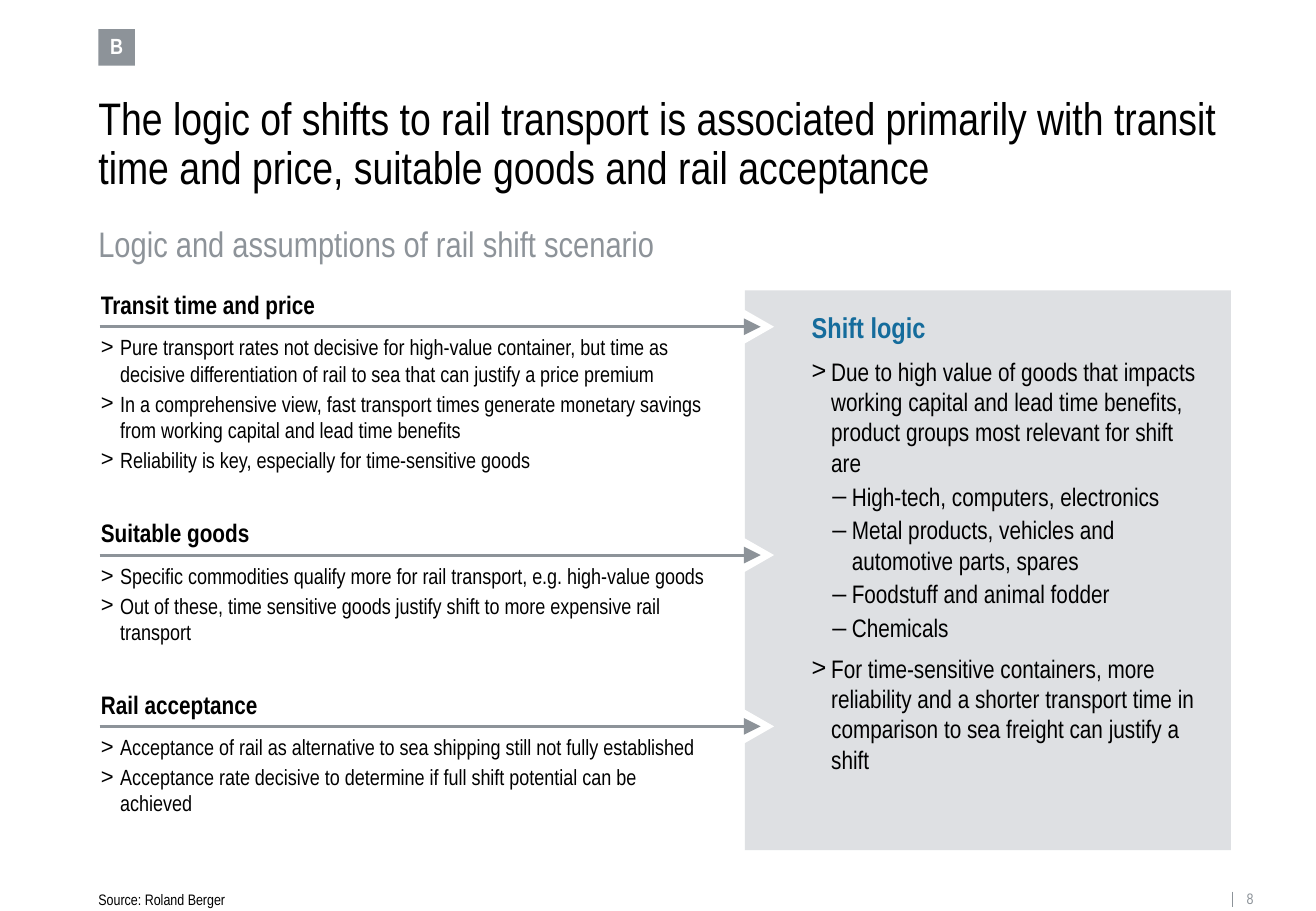
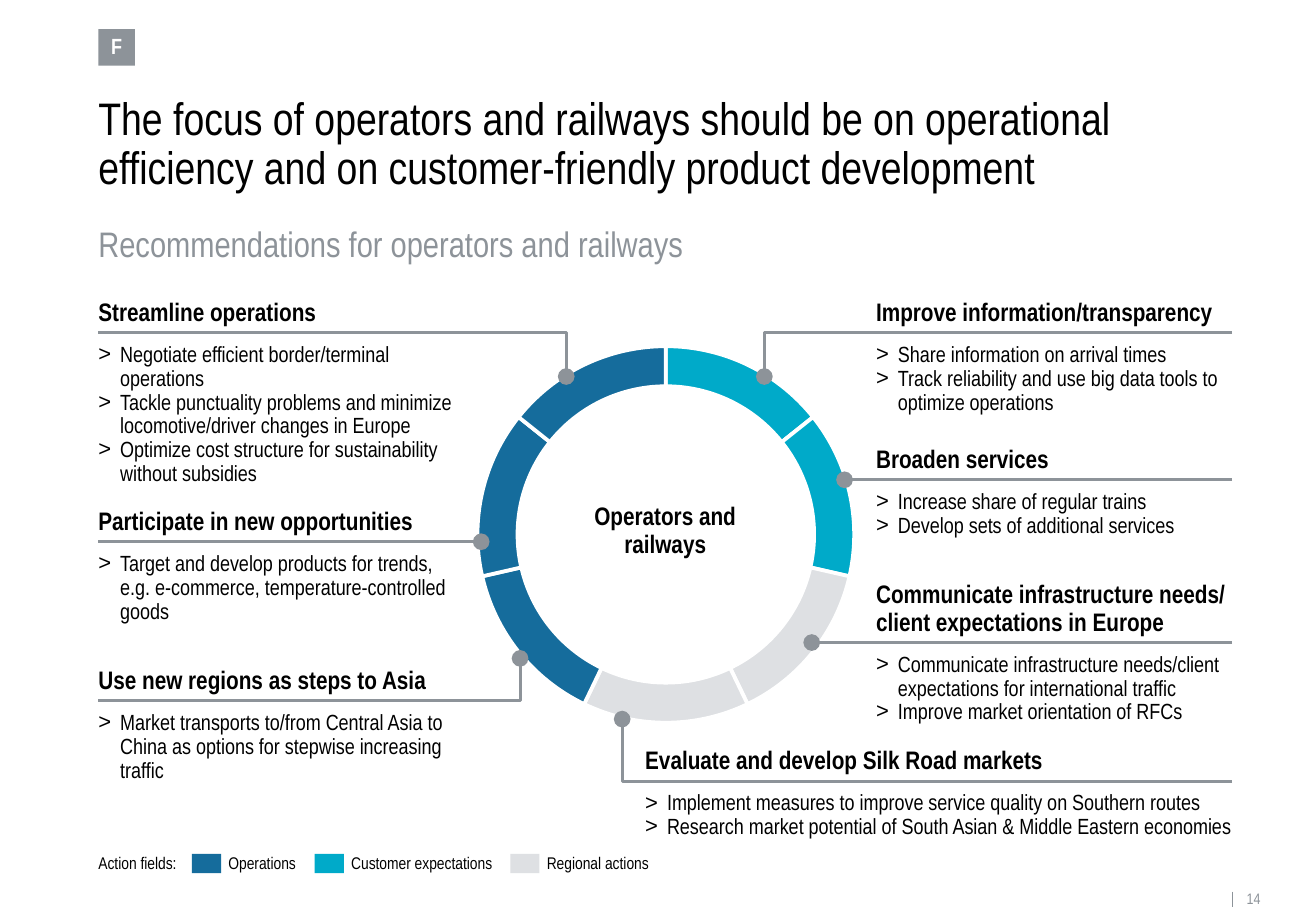
from dataclasses import dataclass
from math import cos, radians, sin, tan

from lxml.etree import SubElement
from pptx import Presentation
from pptx.dml.color import RGBColor
from pptx.enum.shapes import MSO_CONNECTOR as Conn, MSO_SHAPE as Shp
from pptx.enum.text import MSO_ANCHOR as Anchor, MSO_AUTO_SIZE as Fit, PP_ALIGN as Align
from pptx.oxml.ns import qn
from pptx.util import Inches, Pt

FONT = "Arial Narrow"
BULLET_FONT = "Arial"
BLACK = RGBColor(0x00, 0x00, 0x00)
WHITE = RGBColor(0xFF, 0xFF, 0xFF)
GREY = RGBColor(0x8D, 0x93, 0x99)
LIGHT = RGBColor(0xDE, 0xE0, 0xE3)
BLUE = RGBColor(0x15, 0x6C, 0x9C)
CYAN = RGBColor(0x00, 0xAA, 0xC9)

LEFT, RIGHT = 0.81, 10.14
TIGHT = 0.9
Point = tuple[float, float]


@dataclass(frozen=True)
class Style:
    size: float
    color: RGBColor = BLACK
    bold: bool = False
    spacing: float | None = None
    align: Align = Align.LEFT
    anchor: Anchor = Anchor.TOP
    wrap: bool = True
    grow: bool = True


@dataclass(frozen=True)
class Bullet:
    text: str
    level: int = 1
    indent: float = 0.16
    before: float = 2


@dataclass(frozen=True)
class Section:
    y: float
    title: str
    bullets: tuple[str, ...]
    height: float = 0.68


@dataclass(frozen=True)
class Callout:
    x: float
    title: str
    bullets: tuple[str, ...]
    route: tuple[Point, ...]
    rows: int = 1
    head_width: float = 2.94
    body_width: float = 2.94
    body_height: float = 0.71


TITLE = Style(27, spacing=TIGHT, grow=False)
SUBTITLE = Style(21, GREY, spacing=TIGHT)
BADGE = Style(13, WHITE, True, TIGHT, Align.CENTER, Anchor.MIDDLE, wrap=False, grow=False)
PAGE = Style(9, GREY, spacing=TIGHT, wrap=False)
SOURCE = Style(9, spacing=TIGHT, anchor=Anchor.BOTTOM, wrap=False)
HEADING = Style(15, bold=True)
CALLOUT_HEAD = Style(15, bold=True, spacing=TIGHT, anchor=Anchor.BOTTOM)
HUB = Style(15, bold=True, spacing=TIGHT, align=Align.CENTER, anchor=Anchor.MIDDLE, grow=False)
BODY = Style(13)
CALLOUT_BODY = Style(13, spacing=TIGHT)
LEGEND = Style(10, spacing=TIGHT, wrap=False)


# Text
def write(shape, items: list[str | Bullet], st: Style, top: float = 0, bottom: float = 0) -> None:
    tf = shape.text_frame
    tf.word_wrap = st.wrap
    tf.auto_size = Fit.SHAPE_TO_FIT_TEXT if st.grow else Fit.NONE
    tf.vertical_anchor = st.anchor
    tf.margin_left = tf.margin_right = 0
    tf.margin_top, tf.margin_bottom = Inches(top), Inches(bottom)
    for i, item in enumerate(items):
        p = tf.add_paragraph() if i else tf.paragraphs[0]
        p.alignment = st.align
        if isinstance(item, Bullet):
            p.level = item.level
            pPr = p._p.get_or_add_pPr()
            pPr.set("marL", str(Inches(item.indent)))
            pPr.set("indent", str(Inches(-0.16 if item.level == 2 else -item.indent)))
            SubElement(pPr, qn("a:buFont")).set("typeface", BULLET_FONT)
            SubElement(pPr, qn("a:buChar")).set("char", "–" if item.level == 2 else ">")
            if i:
                p.space_before = Pt(item.before)
        if st.spacing:
            p.line_spacing = st.spacing
        r = p.add_run()
        r.text = item.text if isinstance(item, Bullet) else item
        r.font.name, r.font.size, r.font.bold = FONT, Pt(st.size), st.bold
        r.font.color.rgb = st.color


def text(s, x: float, y: float, w: float, h: float, items: list[str | Bullet], st: Style,
         top: float = 0, bottom: float = 0) -> None:
    box = s.shapes.add_textbox(Inches(x), Inches(y), Inches(w), Inches(h))
    write(box, items, st, top, bottom)


# Shapes and lines
def block(s, x: float, y: float, w: float, h: float, color: RGBColor, kind: Shp = Shp.RECTANGLE):
    sp = s.shapes.add_shape(kind, Inches(x), Inches(y), Inches(w), Inches(h))
    sp.shadow.inherit = False
    sp.fill.solid()
    sp.fill.fore_color.rgb = color
    sp.line.fill.background()
    return sp


def freeform(s, points: list[Point], closed: bool):
    emu = [(Inches(x), Inches(y)) for x, y in points]
    fb = s.shapes.build_freeform(*emu[0])
    fb.add_line_segments(emu[1:], close=closed)
    sp = fb.convert_to_shape()
    sp.shadow.inherit = False
    return sp


def route_line(s, points: tuple[Point, ...], tail: str | None = None, width: float = 1.75) -> None:
    if len(points) == 2:
        sp = s.shapes.add_connector(Conn.STRAIGHT, *(Inches(v) for pt in points for v in pt))
    else:
        sp = freeform(s, list(points), closed=False)
        sp.fill.background()
    sp.line.color.rgb = GREY
    sp.line.width = Pt(width)
    spPr = sp._element.spPr
    if tail:
        end = SubElement(spPr.find(qn("a:ln")), qn("a:tailEnd"))
        for key, value in (("type", tail), ("w", "lg"), ("len", "lg")):
            end.set(key, value)
    if len(points) == 2:
        SubElement(spPr, qn("a:effectLst"))


# Frame shared by the slides
def new_slide(prs, letter: str, title: str, subtitle: str, number: int):
    s = prs.slides.add_slide(prs.slide_layouts[6])
    text(s, 10.26, 7.34, 0.13, 0.14, [str(number)], PAGE)
    route_line(s, ((RIGHT, 7.34), (RIGHT, 7.47)), width=0.75)
    write(block(s, LEFT, 0.24, 0.3, 0.3, GREY), [letter], BADGE)
    text(s, LEFT, 0.79, 9.34, 0.82, [title], TITLE)
    text(s, LEFT, 1.87, 9.34, 0.33, [subtitle], SUBTITLE)
    return s


# Shift logic slide
SECTIONS = (
    Section(2.69, "Transit time and price", (
        "Pure transport rates not decisive for high-value container, but time as decisive "
        "differentiation of rail to sea that can justify a price premium",
        "In a comprehensive view, fast transport times generate monetary savings from "
        "working capital and lead time benefits",
        "Reliability is key, especially for time-sensitive goods"), 1.15),
    Section(4.57, "Suitable goods", (
        "Specific commodities qualify more for rail transport, e.g. high-value goods",
        "Out of these, time sensitive goods justify shift to more expensive rail transport")),
    Section(5.98, "Rail acceptance", (
        "Acceptance of rail as alternative to sea shipping still not fully established",
        "Acceptance rate decisive to determine if full shift potential can be achieved")),
)
PRODUCT_GROUPS = ("High-tech, computers, electronics",
                  "Metal products, vehicles and automotive parts, spares",
                  "Foodstuff and animal fodder", "Chemicals")
SHIFT_LOGIC = [
    Bullet("Due to high value of goods that impacts working capital and lead time benefits, "
           "product groups most relevant for shift are"),
    *(Bullet(group, level=2, indent=0.33) for group in PRODUCT_GROUPS),
    Bullet("For time-sensitive containers, more reliability and a shorter transport time in "
           "comparison to sea freight can justify a shift", before=6),
]


def draw_section(s, sec: Section) -> None:
    notch = block(s, 6.07, sec.y - 0.14, 0.32, 0.28, WHITE, Shp.ISOSCELES_TRIANGLE)
    notch.rotation = 90
    route_line(s, ((0.82, sec.y), (6.26, sec.y)), "triangle")
    text(s, 0.83, sec.y - 0.31, 4.74, 0.25, [sec.title], HEADING)
    text(s, 0.83, sec.y + 0.06, 5, sec.height, [Bullet(b) for b in sec.bullets], BODY)


def shift_slide(prs) -> None:
    s = new_slide(prs, "B", "The logic of shifts to rail transport is associated primarily with "
                  "transit time and price, suitable goods and rail acceptance",
                  "Logic and assumptions of rail shift scenario", 8)
    block(s, 6.13, 2.39, 4, 4.61, LIGHT)
    text(s, 6.68, 2.55, 3.25, 0.29, ["Shift logic"], Style(17, BLUE, True))
    text(s, 6.68, 2.93, 3.25, 3.48, SHIFT_LOGIC, Style(15))
    for sec in SECTIONS:
        draw_section(s, sec)
    text(s, LEFT, 7.34, 1.08, 0.14, ["Source: Roland Berger"], SOURCE)


# Recommendations slide
CENTER = (5.48, 4.4)
OUTER, INNER = 1.55, 1.22
SEGMENTS = (CYAN, CYAN, LIGHT, LIGHT, BLUE, BLUE, BLUE)
COL = 7.21
CALLOUTS = (
    Callout(LEFT, "Streamline operations", (
        "Negotiate efficient border/terminal operations",
        "Tackle punctuality problems and minimize locomotive/driver changes in Europe",
        "Optimize cost structure for sustainability without subsidies"),
        ((LEFT, 2.74), (4.66, 2.74), (4.66, 3.1)), body_height=1.5),
    Callout(LEFT, "Participate in new opportunities", (
        "Target and develop products for trends, e.g. e-commerce, temperature-controlled goods",),
        ((LEFT, 4.46), (3.96, 4.46))),
    Callout(LEFT, "Use new regions as steps to Asia", (
        "Market transports to/from Central Asia to China as options for stepwise "
        "increasing traffic",),
        ((LEFT, 5.77), (4.28, 5.77), (4.28, 5.42))),
    Callout(COL, "Improve information/transparency", (
        "Share information on arrival times",
        "Track reliability and use big data tools to optimize operations"),
        ((RIGHT, 2.74), (6.29, 2.74), (6.29, 3.1))),
    Callout(COL, "Broaden services", (
        "Increase share of regular trains", "Develop sets of additional services"),
        ((RIGHT, 3.95), (6.95, 3.95)), body_height=0.51),
    Callout(COL, "Communicate infrastructure needs/ client expectations in Europe", (
        "Communicate infrastructure needs/client expectations for international traffic",
        "Improve market orientation of RFCs"),
        ((RIGHT, 5.29), (6.68, 5.29)), rows=2),
    Callout(5.31, "Evaluate and develop Silk Road markets", (
        "Implement measures to improve service quality on Southern routes",
        "Research market potential of South Asian & Middle Eastern economies"),
        ((RIGHT, 6.43), (5.12, 6.43), (5.12, 5.92)),
        head_width=4.26, body_width=5, body_height=0.51),
)
KEYS = ((1.58, 0.56, BLUE, "Operations"), (2.59, 1.17, CYAN, "Customer expectations"),
        (4.2, 0.84, LIGHT, "Regional actions"))


def arc(radius: float, start: float, sweep: float) -> list[Point]:
    """Start, two control points and end of an arc, clockwise from the top."""
    a, b = radians(start), radians(start + sweep)
    k = 4 / 3 * tan((b - a) / 4)
    units = ((sin(a), cos(a)), (sin(a) + k * cos(a), cos(a) - k * sin(a)),
             (sin(b) - k * cos(b), cos(b) + k * sin(b)), (sin(b), cos(b)))
    return [(CENTER[0] + radius * x, CENTER[1] - radius * y) for x, y in units]


def bend(sp) -> None:
    """Turn the outer and inner three-step sides of a ring segment into curves."""
    steps = list(sp._element.iter(qn("a:lnTo")))
    for first, second, third in (steps[:3], steps[4:7]):
        first.tag = qn("a:cubicBezTo")
        for step in (second, third):
            first.append(step[0])
            step.getparent().remove(step)


def draw_ring(s) -> None:
    sweep = 360 / len(SEGMENTS)
    for i, color in enumerate(SEGMENTS):
        outline = arc(OUTER, i * sweep, sweep) + arc(INNER, (i + 1) * sweep, -sweep)
        sp = freeform(s, outline, closed=True)
        bend(sp)
        sp.fill.solid()
        sp.fill.fore_color.rgb = color
        sp.line.color.rgb = WHITE
        sp.line.width = Pt(2.25)
    text(s, 4.66, 3.56, 1.63, 1.63, ["Operators and railways"], HUB)


def draw_callout(s, c: Callout) -> None:
    y = c.route[0][1]
    height = 0.09 + 0.22 * c.rows
    route_line(s, c.route, "oval")
    text(s, c.x, y + 0.03 - height, c.head_width, height, [c.title], CALLOUT_HEAD, bottom=0.08)
    text(s, c.x, y - 0.03, c.body_width, c.body_height,
         [Bullet(b, indent=0.18, before=0) for b in c.bullets], CALLOUT_BODY, top=0.12)


def recommendation_slide(prs) -> None:
    s = new_slide(prs, "F", "The focus of operators and railways should be on operational "
                  "efficiency and on customer-friendly product development",
                  "Recommendations for operators and railways", 14)
    draw_ring(s)
    for c in CALLOUTS:
        draw_callout(s, c)
    text(s, LEFT, 7.04, 0.65, 0.15, ["Action fields:"], LEGEND)
    for x, width, color, label in KEYS:
        block(s, x, 7.03, 0.24, 0.16, color)
        text(s, x + 0.3, 7.04, width, 0.15, [label], LEGEND)


def main() -> None:
    prs = Presentation()
    prs.slide_width, prs.slide_height = Inches(10.83), Inches(7.5)
    shift_slide(prs)
    recommendation_slide(prs)
    prs.save("out.pptx")


if __name__ == "__main__":
    main()
